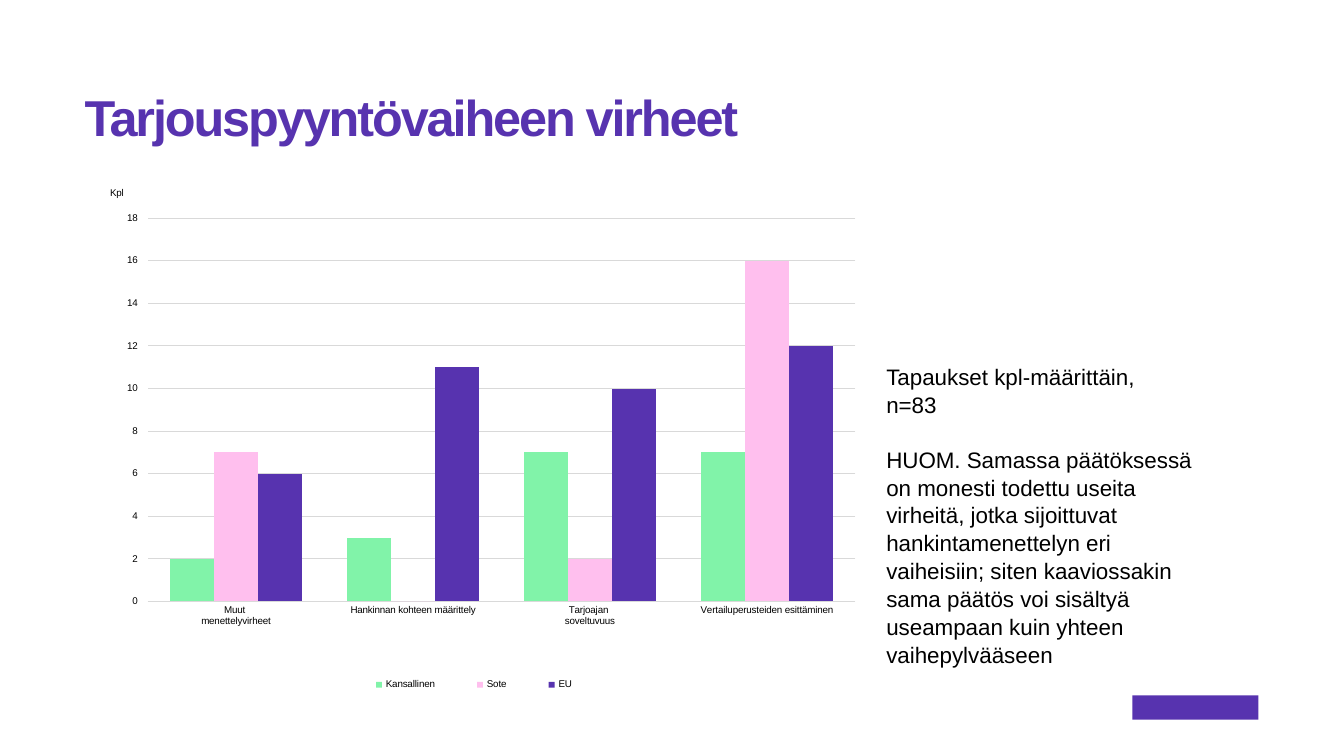
from dataclasses import dataclass
from typing import Optional

from lxml.etree import SubElement
from pptx import Presentation
from pptx.chart.chart import Chart
from pptx.chart.data import CategoryChartData
from pptx.dml.color import RGBColor
from pptx.enum.chart import XL_CHART_TYPE, XL_LEGEND_POSITION, XL_TICK_MARK
from pptx.enum.shapes import MSO_SHAPE
from pptx.oxml.ns import qn
from pptx.slide import Slide
from pptx.text.text import TextFrame
from pptx.util import Inches, Pt


@dataclass(frozen=True)
class Theme:
    font: str = "Arial"
    purple: RGBColor = RGBColor(0x57, 0x33, 0xAF)
    green: RGBColor = RGBColor(0x81, 0xF3, 0xA9)
    pink: RGBColor = RGBColor(0xFF, 0xBF, 0xEE)
    grid: RGBColor = RGBColor(0xD9, 0xD9, 0xD9)
    black: RGBColor = RGBColor(0, 0, 0)
    title_size: int = 36
    note_size: int = 16
    chart_size: int = 7


@dataclass(frozen=True)
class Area:
    left: float
    top: float
    width: float
    height: float

    def lengths(self) -> list[int]:
        return [Inches(side) for side in (self.left, self.top, self.width, self.height)]


@dataclass(frozen=True)
class ErrorSeries:
    name: str
    counts: tuple[int, ...]
    color: RGBColor


@dataclass(frozen=True)
class Placement:
    x: float
    y: float
    w: Optional[float] = None
    h: Optional[float] = None
    inner: bool = False


THEME = Theme()
CATEGORIES = (
    "Muut \nmenettelyvirheet",
    "Hankinnan kohteen määrittely",
    "Tarjoajan \nsoveltuvuus",
    "Vertailuperusteiden esittäminen",
)
SERIES = (
    ErrorSeries("Kansallinen", (2, 3, 7, 7), THEME.green),
    ErrorSeries("Sote", (7, 0, 2, 16), THEME.pink),
    ErrorSeries("EU", (6, 11, 10, 12), THEME.purple),
)
COUNT_LINES = ("Tapaukset kpl-määrittäin,", "n=83")
REMARK_LINES = (
    "HUOM. Samassa päätöksessä",
    "on monesti todettu useita",
    "virheitä, jotka sijoittuvat",
    "hankintamenettelyn eri",
    "vaiheisiin; siten kaaviossakin",
    "sama päätös voi sisältyä",
    "useampaan kuin yhteen",
    "vaihepylvääseen",
)


def add_text(slide: Slide, area: Area, lines: tuple[str, ...], size: int,
             color: RGBColor, line_spacing: float, bold: bool = False) -> TextFrame:
    frame = slide.shapes.add_textbox(*area.lengths()).text_frame
    frame.word_wrap = True
    frame.margin_left = frame.margin_top = frame.margin_right = frame.margin_bottom = 0
    frame.text = "\n".join(lines)
    for para in frame.paragraphs:
        para.line_spacing = line_spacing
        for span in para.runs:
            span.font.name = THEME.font
            span.font.size = Pt(size)
            span.font.bold = bold
            span.font.color.rgb = color
    return frame


def place(element, index: int, placement: Placement) -> None:
    for old in element.findall(qn("c:layout")):
        element.remove(old)
    layout = SubElement(element, qn("c:layout"))
    element.insert(index, layout)
    manual = SubElement(layout, qn("c:manualLayout"))
    settings = {"xMode": "edge", "yMode": "edge", "x": placement.x,
                "y": placement.y, "w": placement.w, "h": placement.h}
    if placement.inner:
        settings = {"layoutTarget": "inner"} | settings
    for name, setting in settings.items():
        if setting is not None:
            SubElement(manual, qn(f"c:{name}")).set("val", str(setting))


def style_axes(chart: Chart) -> None:
    category_axis, value_axis = chart.category_axis, chart.value_axis
    category_axis.major_tick_mark = XL_TICK_MARK.NONE
    value_axis.major_tick_mark = XL_TICK_MARK.OUTSIDE
    value_axis.minimum_scale, value_axis.maximum_scale = 0, 18
    value_axis.major_unit = 2
    value_axis.format.line.fill.background()
    for line in (category_axis.format.line, value_axis.major_gridlines.format.line):
        line.color.rgb = THEME.grid
        line.width = Pt(0.75)

    frame = value_axis.axis_title.text_frame
    frame.text = "Kpl"
    frame._txBody.find(qn("a:bodyPr")).set("rot", "0")
    font = frame.paragraphs[0].runs[0].font
    font.name, font.size, font.bold = THEME.font, Pt(THEME.chart_size), False
    font.color.rgb = THEME.black
    place(value_axis.axis_title._element, 1, Placement(0.03, 0.01))


def add_error_chart(slide: Slide, area: Area) -> None:
    data = CategoryChartData(number_format="0")
    data.categories = CATEGORIES
    for entry in SERIES:
        data.add_series(entry.name, entry.counts)
    chart = slide.shapes.add_chart(
        XL_CHART_TYPE.COLUMN_CLUSTERED, *area.lengths(), data).chart
    chart.has_title = False
    chart.font.name = THEME.font
    chart.font.size = Pt(THEME.chart_size)
    chart.font.color.rgb = THEME.black

    plot = chart.plots[0]
    plot.gap_width, plot.overlap = 100, 0
    plot.vary_by_categories = False
    for series, entry in zip(plot.series, SERIES):
        series.format.fill.solid()
        series.format.fill.fore_color.rgb = entry.color
    style_axes(chart)

    chart.has_legend = True
    chart.legend.position = XL_LEGEND_POSITION.BOTTOM
    chart.legend.include_in_layout = False
    place(chart.legend._element, 1, Placement(0.32, 0.89, 0.35, 0.04))
    place(chart._chartSpace.chart.plotArea, 0,
          Placement(0.08, 0.07, 0.9, 0.69, inner=True))


def add_brand_block(slide: Slide, area: Area) -> None:
    block = slide.shapes.add_shape(MSO_SHAPE.RECTANGLE, *area.lengths())
    block.shadow.inherit = False
    block.fill.solid()
    block.fill.fore_color.rgb = THEME.purple
    block.line.fill.background()


def main() -> None:
    deck = Presentation()
    deck.slide_width, deck.slide_height = Inches(13.33), Inches(7.5)
    page = deck.slides.add_slide(deck.slide_layouts[6])

    add_brand_block(page, Area(11.23, 6.9, 1.25, 0.24))
    title = add_text(page, Area(0.84, 0.92, 11.66, 0.63), ("Tarjouspyyntövaiheen virheet",),
                     THEME.title_size, THEME.purple, 0.9, bold=True)
    title.paragraphs[0].runs[0].font._element.set("spc", "-150")
    add_error_chart(page, Area(0.84, 1.78, 7.8, 5.51))
    note = add_text(page, Area(8.79, 3.59, 4.41, 2.68), COUNT_LINES + REMARK_LINES,
                    THEME.note_size, THEME.black, 1.04)
    note.paragraphs[len(COUNT_LINES)].space_before = Pt(19.2)
    deck.save("out.pptx")


if __name__ == "__main__":
    main()
